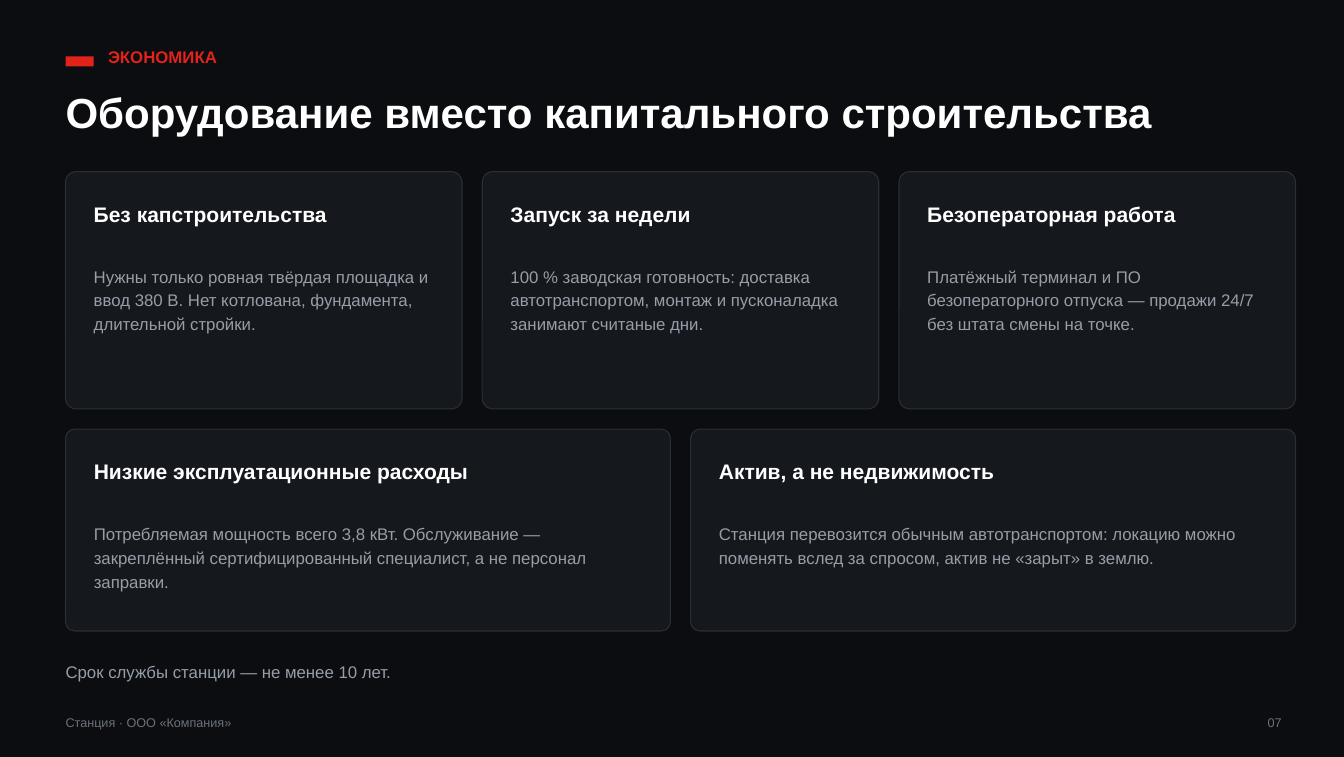
from dataclasses import dataclass

from pptx import Presentation
from pptx.dml.color import RGBColor
from pptx.enum.shapes import MSO_SHAPE
from pptx.enum.text import MSO_ANCHOR, MSO_AUTO_SIZE, PP_ALIGN
from pptx.util import Cm, Pt


@dataclass(frozen=True)
class Theme:
    font: str = "Arial"
    back: str = "0B0D10"
    card: str = "15181D"
    border: str = "2A2F37"
    accent: str = "E2231A"
    light: str = "FFFFFF"
    muted: str = "969EA8"
    faint: str = "6B727B"
    title: int = 30
    heading: int = 15
    body: int = 12
    footer: int = 9


T = Theme()


def write(sp, text, size, color, bold=False, align=PP_ALIGN.LEFT, spacing=1.0):
    tf = sp.text_frame
    tf.margin_left = tf.margin_right = tf.margin_top = tf.margin_bottom = 0
    tf.vertical_anchor = MSO_ANCHOR.TOP
    tf.word_wrap = True
    tf.auto_size = MSO_AUTO_SIZE.SHAPE_TO_FIT_TEXT
    p = tf.paragraphs[0]
    p.text = text
    p.alignment = align
    p.line_spacing = spacing
    p.font.name = T.font
    p.font.size = Pt(size)
    p.font.bold = bold
    p.font.color.rgb = RGBColor.from_string(color)


def box(kind, left, top, width, height, fill):
    sp = s.shapes.add_shape(kind, Cm(left), Cm(top), Cm(width), Cm(height))
    sp.shadow.inherit = False
    sp.fill.solid()
    sp.fill.fore_color.rgb = RGBColor.from_string(fill)
    sp.line.fill.background()
    return sp


prs = Presentation()
prs.slide_width = Cm(33.83)
prs.slide_height = Cm(19.05)
s = prs.slides.add_slide(prs.slide_layouts[5])
s.background.fill.solid()
s.background.fill.fore_color.rgb = RGBColor.from_string(T.back)

LEFT, WIDTH, GAP, PAD = 1.65, 30.96, 0.51, 0.71

title = s.shapes.title
title.left, title.top, title.width, title.height = Cm(LEFT), Cm(2.18), Cm(30.48), Cm(1.17)
write(title, "Оборудование вместо капитального строительства", T.title, T.light, bold=True)

box(MSO_SHAPE.RECTANGLE, LEFT, 1.42, 0.71, 0.25, T.accent)
section = s.shapes.add_textbox(Cm(2.72), Cm(1.17), Cm(30.48), Cm(0.48))
write(section, "ЭКОНОМИКА", T.body, T.accent, bold=True)

rows = [
    (4.32, 5.97, [
        ("Без капстроительства",
         "Нужны только ровная твёрдая площадка и ввод 380 В. "
         "Нет котлована, фундамента, длительной стройки."),
        ("Запуск за недели",
         "100 % заводская готовность: доставка автотранспортом, "
         "монтаж и пусконаладка занимают считаные дни."),
        ("Безоператорная работа",
         "Платёжный терминал и ПО безоператорного отпуска — "
         "продажи 24/7 без штата смены на точке."),
    ]),
    (10.8, 5.08, [
        ("Низкие эксплуатационные расходы",
         "Потребляемая мощность всего 3,8 кВт. Обслуживание — "
         "закреплённый сертифицированный специалист, а не персонал заправки."),
        ("Актив, а не недвижимость",
         "Станция перевозится обычным автотранспортом: локацию можно "
         "поменять вслед за спросом, актив не «зарыт» в землю."),
    ]),
]
for top, height, cards in rows:
    width = (WIDTH - GAP * (len(cards) - 1)) / len(cards)
    for i, (heading, body) in enumerate(cards):
        left = LEFT + i * (width + GAP)
        card = box(MSO_SHAPE.ROUNDED_RECTANGLE, left, top, width, height, T.card)
        card.adjustments[0] = 0.045
        card.line.color.rgb = RGBColor.from_string(T.border)
        card.line.width = Pt(0.75)
        inner = Cm(width - 2 * PAD)
        sp = s.shapes.add_textbox(Cm(left + PAD), Cm(top + PAD), inner, Cm(0.58))
        write(sp, heading, T.heading, T.light, bold=True, spacing=1.05)
        sp = s.shapes.add_textbox(Cm(left + PAD), Cm(top + 2.29), inner, Cm(1.65))
        write(sp, body, T.body, T.muted, spacing=1.18)

note = s.shapes.add_textbox(Cm(LEFT), Cm(16.64), Cm(30.48), Cm(0.48))
write(note, "Срок службы станции — не менее 10 лет.", T.body, T.muted)
footer = s.shapes.add_textbox(Cm(LEFT), Cm(17.98), Cm(15.24), Cm(0.36))
write(footer, "Станция · ООО «Компания»", T.footer, T.faint)
number = s.shapes.add_textbox(Cm(30.99), Cm(17.98), Cm(1.27), Cm(0.36))
write(number, "07", T.footer, T.faint, align=PP_ALIGN.RIGHT)

prs.save("out.pptx")
